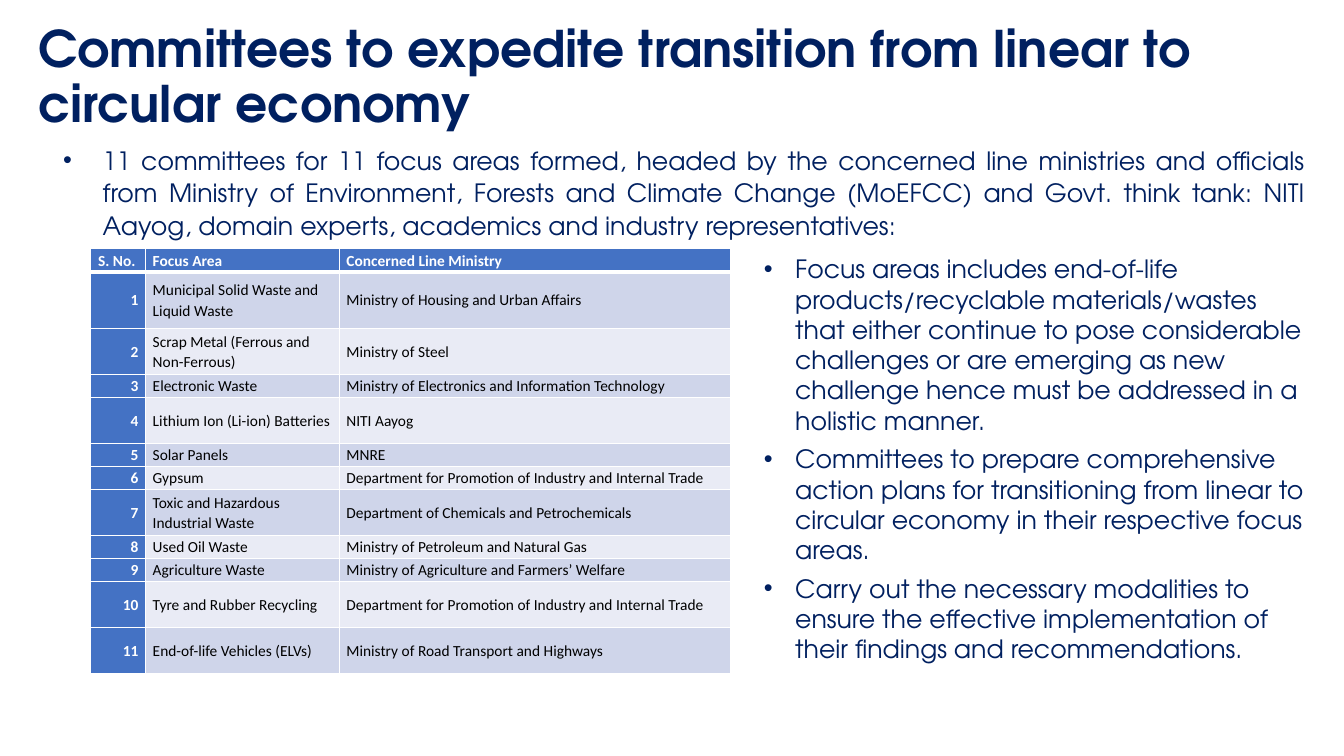
from lxml import etree
from pptx import Presentation
from pptx.dml.color import RGBColor
from pptx.enum.text import MSO_ANCHOR, PP_ALIGN
from pptx.oxml.ns import qn
from pptx.util import Cm, Pt

NAVY = RGBColor(0x00, 0x20, 0x60)
BLUE = RGBColor(0x44, 0x72, 0xC4)
BAND_DARK = RGBColor(0xCF, 0xD5, 0xEA)
BAND_LIGHT = RGBColor(0xE9, 0xEB, 0xF5)
WHITE = RGBColor(0xFF, 0xFF, 0xFF)
BLACK = RGBColor(0x00, 0x00, 0x00)

LEFT, RIGHT, JUSTIFY = PP_ALIGN.LEFT, PP_ALIGN.RIGHT, PP_ALIGN.JUSTIFY
TOP, MIDDLE = MSO_ANCHOR.TOP, MSO_ANCHOR.MIDDLE

TITLE = "Committees to expedite transition from linear to circular economy"
INTRO = (
    "11 committees for 11 focus areas formed, headed by the concerned line ministries "
    "and officials from Ministry of Environment, Forests and Climate Change (MoEFCC) "
    "and Govt. think tank: NITI Aayog, domain experts, academics and industry "
    "representatives: "
)
POINTS = [
    "Focus areas includes end-of-life products/recyclable materials/wastes that either "
    "continue to pose considerable challenges or are emerging as new challenge hence "
    "must be addressed in a holistic manner.",
    "Committees to prepare comprehensive action plans for transitioning from linear to "
    "circular economy in their respective focus areas.",
    "Carry out the necessary modalities to ensure the effective implementation of their "
    "findings and recommendations.",
]
HEADER = ("S. No.", "Focus Area", "Concerned Line Ministry")
SHORT, TALL, TALLEST = 0.58, 1.16, 1.42
COMMITTEES = [
    ("Municipal Solid Waste and Liquid Waste", "Ministry of Housing and Urban Affairs", TALLEST),
    ("Scrap Metal (Ferrous and Non-Ferrous)", "Ministry of Steel", TALL),
    ("Electronic Waste", "Ministry of Electronics and Information Technology", SHORT),
    ("Lithium Ion (Li-ion) Batteries", "NITI Aayog", TALL),
    ("Solar Panels", "MNRE", SHORT),
    ("Gypsum", "Department for Promotion of Industry and Internal Trade", SHORT),
    ("Toxic and Hazardous Industrial Waste", "Department of Chemicals and Petrochemicals", TALL),
    ("Used Oil Waste", "Ministry of Petroleum and Natural Gas", SHORT),
    ("Agriculture Waste", "Ministry of Agriculture and Farmers’ Welfare", SHORT),
    ("Tyre and Rubber Recycling", "Department for Promotion of Industry and Internal Trade", TALL),
    ("End-of-life Vehicles (ELVs)", "Ministry of Road Transport and Highways", TALL),
]
COLUMN_WIDTHS = (1.38, 4.88, 9.87)


def write(p, text, font="TeX Gyre Adventor", size=18, color=NAVY, bold=False,
          align=LEFT, spacing=1.0, before=0, after=0, indent=None):
    p.alignment = align
    p.line_spacing = spacing
    p.space_before = Pt(before)
    p.space_after = Pt(after)
    r = p.add_run()
    r.text = text
    r.font.name = font
    r.font.size = Pt(size)
    r.font.bold = bold
    r.font.color.rgb = color
    if indent:
        margin, hang = indent
        pPr = p._p.get_or_add_pPr()
        pPr.set("marL", str(Cm(margin)))
        pPr.set("indent", str(-Cm(hang)))
        etree.SubElement(pPr, qn("a:buFont"), typeface="Arial")
        etree.SubElement(pPr, qn("a:buChar"), char="•")


class Deck:
    def __init__(self, width, height):
        self.prs = Presentation()
        self.prs.slide_width, self.prs.slide_height = Cm(width), Cm(height)
        self.s = self.prs.slides.add_slide(self.prs.slide_layouts[6])

    def text(self, box, paragraphs, anchor=TOP, **style):
        tf = self.s.shapes.add_textbox(*map(Cm, box)).text_frame
        tf.word_wrap = True
        tf.vertical_anchor = anchor
        for i, text in enumerate(paragraphs):
            p = tf.add_paragraph() if i else tf.paragraphs[0]
            write(p, text, **style)

    def border(self, cell, bottom):
        tcPr = cell._tc.get_or_add_tcPr()
        for side, width in (("L", 1), ("R", 1), ("T", 1), ("B", bottom)):
            ln = etree.SubElement(tcPr, qn(f"a:ln{side}"), w=str(Pt(width)))
            fill = etree.SubElement(ln, qn("a:solidFill"))
            etree.SubElement(fill, qn("a:srgbClr"), val=str(WHITE))

    def cell(self, cell, text, fill, align=LEFT, strong=False, bottom=1):
        self.border(cell, bottom)
        cell.fill.solid()
        cell.fill.fore_color.rgb = fill
        cell.margin_left = cell.margin_right = Cm(0.18)
        cell.margin_top = cell.margin_bottom = 0
        cell.vertical_anchor = MIDDLE
        write(cell.text_frame.paragraphs[0], text, font="Calibri", size=11,
              color=WHITE if strong else BLACK, bold=strong, align=align,
              spacing=1.07, after=8)

    def table(self, left, top, widths, header, rows):
        heights = [SHORT] + [height for *_, height in rows]
        table = self.s.shapes.add_table(
            len(heights), len(widths), Cm(left), Cm(top),
            Cm(sum(widths)), Cm(sum(heights))).table
        table.first_col = True
        for column, width in zip(table.columns, widths):
            column.width = Cm(width)
        for row, height in zip(table.rows, heights):
            row.height = Cm(height)
        for c, text in enumerate(header):
            self.cell(table.cell(0, c), text, BLUE, strong=True, bottom=3)
        for n, (area, ministry, _) in enumerate(rows, 1):
            band = BAND_DARK if n % 2 else BAND_LIGHT
            self.cell(table.cell(n, 0), str(n), BLUE, align=RIGHT, strong=True)
            self.cell(table.cell(n, 1), area, band)
            self.cell(table.cell(n, 2), ministry, band)


def main():
    deck = Deck(33.87, 19.05)
    deck.text((0.71, 0.38, 32.77, 3.2), [TITLE], anchor=MIDDLE,
              size=36, bold=True, spacing=0.9)
    deck.text((1.09, 3.48, 32.05, 14.5), [INTRO], align=JUSTIFY,
              spacing=1.07, indent=(1.25, 1))
    deck.table(2.29, 6.27, COLUMN_WIDTHS, HEADER, COMMITTEES)
    deck.text((19, 6.27, 14.17, 10.7), POINTS, before=6, indent=(0.79, 0.79))
    deck.prs.save("out.pptx")


if __name__ == "__main__":
    main()
